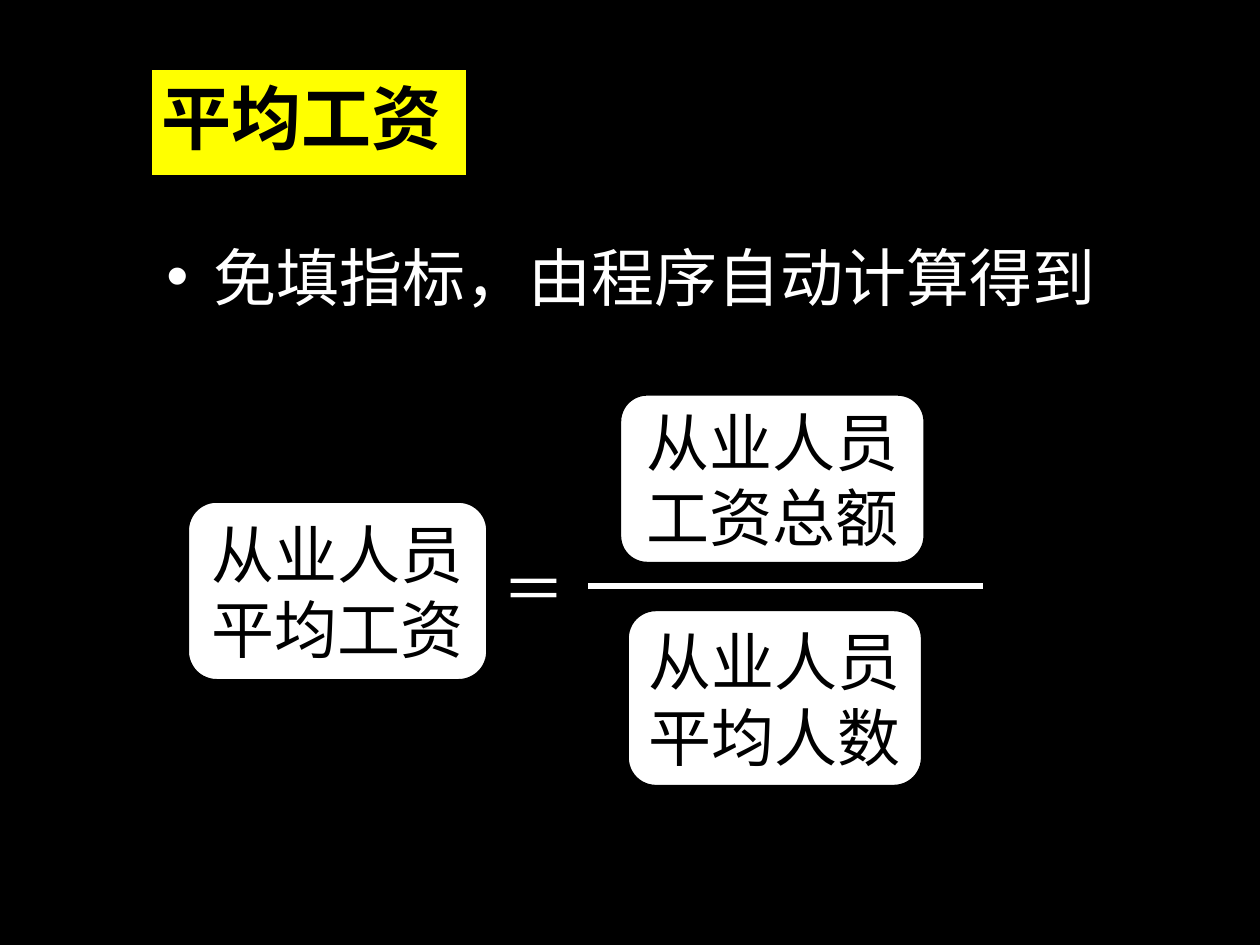
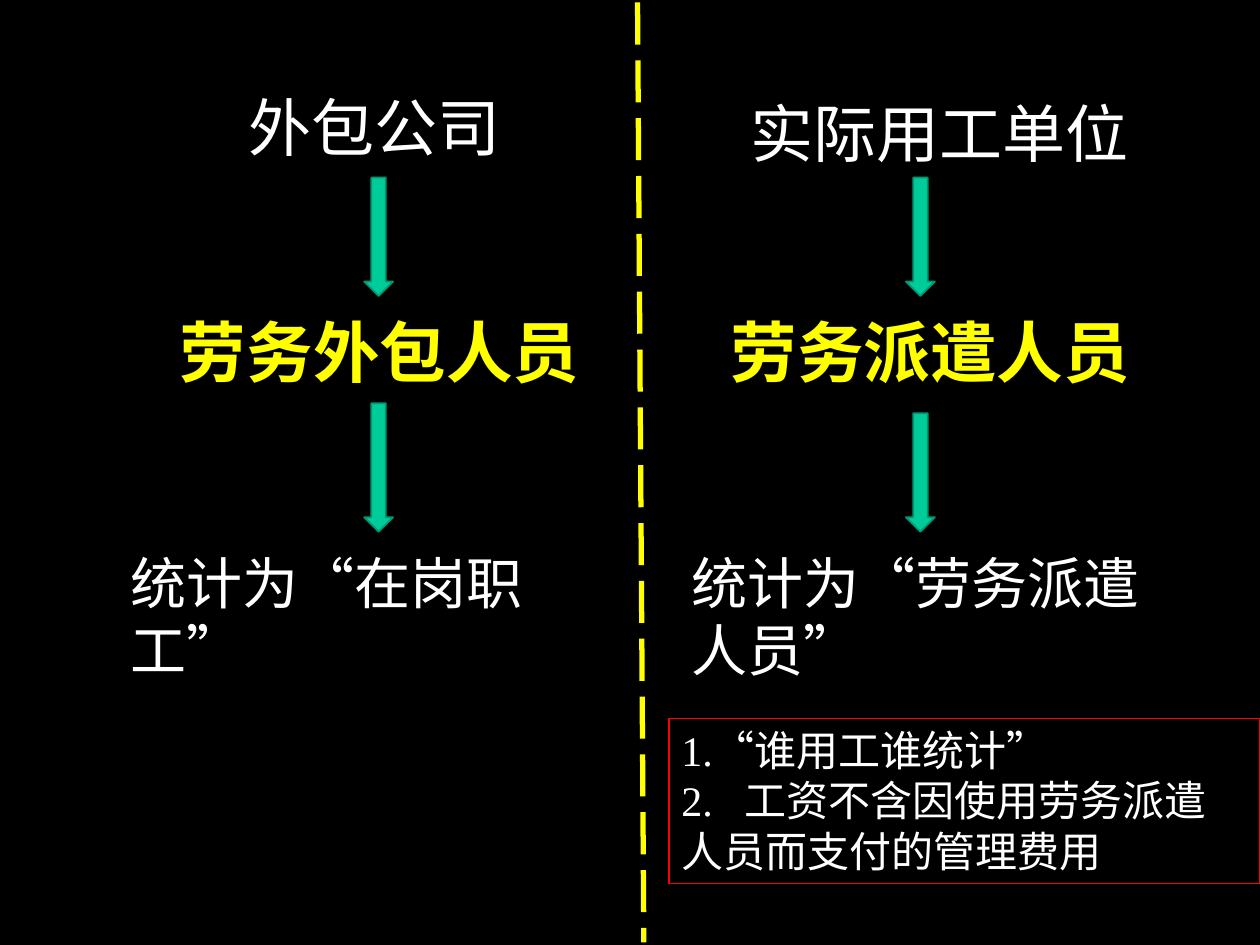
from lxml import etree
from pptx import Presentation
from pptx import util as u
from pptx.dml.color import RGBColor
from pptx.enum import dml, shapes, text
from pptx.oxml.ns import qn

COLORS = {
    "black": "000000",
    "white": "FFFFFF",
    "yellow": "FFFF00",
    "green": "00CC99",
    "dark_green": "009771",
    "red": "FF0000",
}
SERIF = "Times New Roman"
SANS = "Noto Sans CJK SC"
GRID_COLUMNS, GRID_ROWS = 100, 75
WIDTH, HEIGHT = u.Inches(10), u.Inches(7.5)


def color(name):
    """Return the named palette colour."""
    return RGBColor.from_string(COLORS[name])


def across(columns):
    """Turn grid columns into a length."""
    return round(WIDTH * columns / GRID_COLUMNS)


def down(rows):
    """Turn grid rows into a length."""
    return round(HEIGHT * rows / GRID_ROWS)


def area(left, top, width, height):
    """Turn a grid area into left, top, width and height."""
    return across(left), down(top), across(width), down(height)


def add_slide(deck, layout):
    """Add a black slide with the given layout number."""
    slide = deck.slides.add_slide(deck.slide_layouts[layout])
    slide.background.fill.solid()
    slide.background.fill.fore_color.rgb = color("black")
    return slide


def paint(shape, fill, line, weight):
    """Set the fill and outline of a shape."""
    if fill:
        shape.fill.solid()
        shape.fill.fore_color.rgb = color(fill)
    else:
        shape.fill.background()
    shape.line.color.rgb = color(line)
    shape.line.width = u.Pt(weight)


def write(box, lines, size, ink="white", face=SERIF, bold=False, spacing=None,
          align=text.PP_ALIGN.LEFT, anchor=text.MSO_ANCHOR.TOP):
    """Fill a box with paragraphs of one style."""
    frame = box.text_frame
    frame.word_wrap = True
    frame.auto_size = text.MSO_AUTO_SIZE.NONE
    frame.vertical_anchor = anchor
    frame.text = "\n".join(lines)
    for para in frame.paragraphs:
        para.alignment = align
        para.space_before = u.Pt(0)
        if spacing:
            para.line_spacing = spacing
        para.font.size = u.Pt(size)
        para.font.name = face
        para.font.bold = bold
        para.font.color.rgb = color(ink)


def add_label(slide, place, words, size, **style):
    """Add a text box with one paragraph."""
    write(slide.shapes.add_textbox(*area(*place)), [words], size, **style)


def add_shape(slide, kind, place, fill, line, weight):
    """Add a painted preset shape without a shadow."""
    shape = slide.shapes.add_shape(kind, *area(*place))
    shape.shadow.inherit = False
    paint(shape, fill, line, weight)
    return shape


def add_term(slide, place, words):
    """Add a rounded white box for one term of the formula."""
    box = add_shape(slide, shapes.MSO_SHAPE.ROUNDED_RECTANGLE, place, "white", "black", 3)
    write(box, [words], 36, "black", SANS,
          align=text.PP_ALIGN.CENTER, anchor=text.MSO_ANCHOR.MIDDLE)


def add_line(slide, start, end, ink, dash=None):
    """Add a straight line between two grid points."""
    line = slide.shapes.add_connector(
        shapes.MSO_CONNECTOR.STRAIGHT,
        across(start[0]), down(start[1]), across(end[0]), down(end[1]))
    line.line.color.rgb = color(ink)
    line.line.width = u.Pt(3)
    if dash:
        line.line.dash_style = dash
    etree.SubElement(line._element.spPr, qn("a:effectLst"))


def add_arrow(slide, left, top, bottom):
    """Add a green arrow pointing down."""
    add_shape(slide, shapes.MSO_SHAPE.DOWN_ARROW, (left, top, 2.3, bottom - top),
              "green", "dark_green", 1)


def move(placeholder, place):
    """Move a placeholder to a grid area."""
    (placeholder.left, placeholder.top,
     placeholder.width, placeholder.height) = area(*place)


def remove_bullet(para):
    """Remove the bullet and hanging indent of a paragraph."""
    props = para._p.get_or_add_pPr()
    props.set("marL", "0")
    props.set("indent", "0")
    etree.SubElement(props, qn("a:buNone"))


def add_tab_stop(para, columns):
    """Add one left tab stop to a paragraph."""
    props = para._p.get_or_add_pPr()
    stops = etree.Element(qn("a:tabLst"))
    etree.SubElement(stops, qn("a:tab"), pos=str(across(columns)), algn="l")
    props.find(qn("a:defRPr")).addprevious(stops)


def build_average_wage(deck):
    """Build the slide with the average wage formula."""
    slide = add_slide(deck, 1)
    title, body = slide.placeholders
    move(title, (11.8, 5.3, 25.4, 8.8))
    paint(title, "yellow", "black", 3.5)
    write(title, ["平均工资"], 40, "black", bold=True, spacing=0.9,
          anchor=text.MSO_ANCHOR.MIDDLE)
    move(body, (12.2, 19.6, 83.8, 7.7))
    remove_bullet(body.text_frame.paragraphs[0])
    write(body, ["免填指标，由程序自动计算得到"], 36, face=SANS, spacing=0.8)

    add_term(slide, (49.7, 48.3, 23.6, 14.2), "从业人员平均人数")
    add_term(slide, (49.1, 31.2, 24.4, 13.6), "从业人员工资总额")
    add_term(slide, (14.8, 39.7, 24, 14.4), "从业人员平均工资")
    add_label(slide, (38.9, 43.1, 9.9, 7.6), "＝", 36)
    add_line(slide, (46.7, 46.5), (78, 46.5), "white")


def build_labour_comparison(deck):
    """Build the slide comparing outsourced and dispatched workers."""
    slide = add_slide(deck, 6)
    add_line(slide, (50.6, 0.2), (51.1, 74.8), "yellow", dml.MSO_LINE.LONG_DASH)

    add_label(slide, (18.7, 7, 32.9, 7.1), "外包公司", 36, spacing=u.Pt(40))
    add_label(slide, (58.6, 7, 39.1, 7.1), "实际用工单位", 36)
    add_label(slide, (13.3, 24.2, 33.9, 7.4), "劳务外包人员", 38, ink="yellow", bold=True)
    add_label(slide, (57, 24.2, 35.9, 7.4), "劳务派遣人员", 38, ink="yellow",
              face=SANS, bold=True)
    add_label(slide, (9.4, 43, 41.4, 11.8), "统计为“在岗职工”", 32)
    add_label(slide, (53.9, 43, 41.4, 11.8), "统计为“劳务派遣人员”", 32)

    for left, second_top in ((28.9, 32), (71.9, 32.8)):
        add_arrow(slide, left, 14.1, 23.5)
        add_arrow(slide, left, second_top, 42.2)

    rules = add_shape(slide, shapes.MSO_SHAPE.RECTANGLE, (53.1, 57, 46.9, 13.1),
                      None, "red", 0.75)
    write(rules, ["1.“谁用工谁统计”", "2.\t工资不含因使用劳务派遣人员而支付的管理费用"], 24)
    add_tab_stop(rules.text_frame.paragraphs[1], 5)


def main():
    """Build and save the deck."""
    deck = Presentation()
    deck.slide_width, deck.slide_height = WIDTH, HEIGHT
    build_average_wage(deck)
    build_labour_comparison(deck)
    deck.save("out.pptx")


if __name__ == "__main__":
    main()
